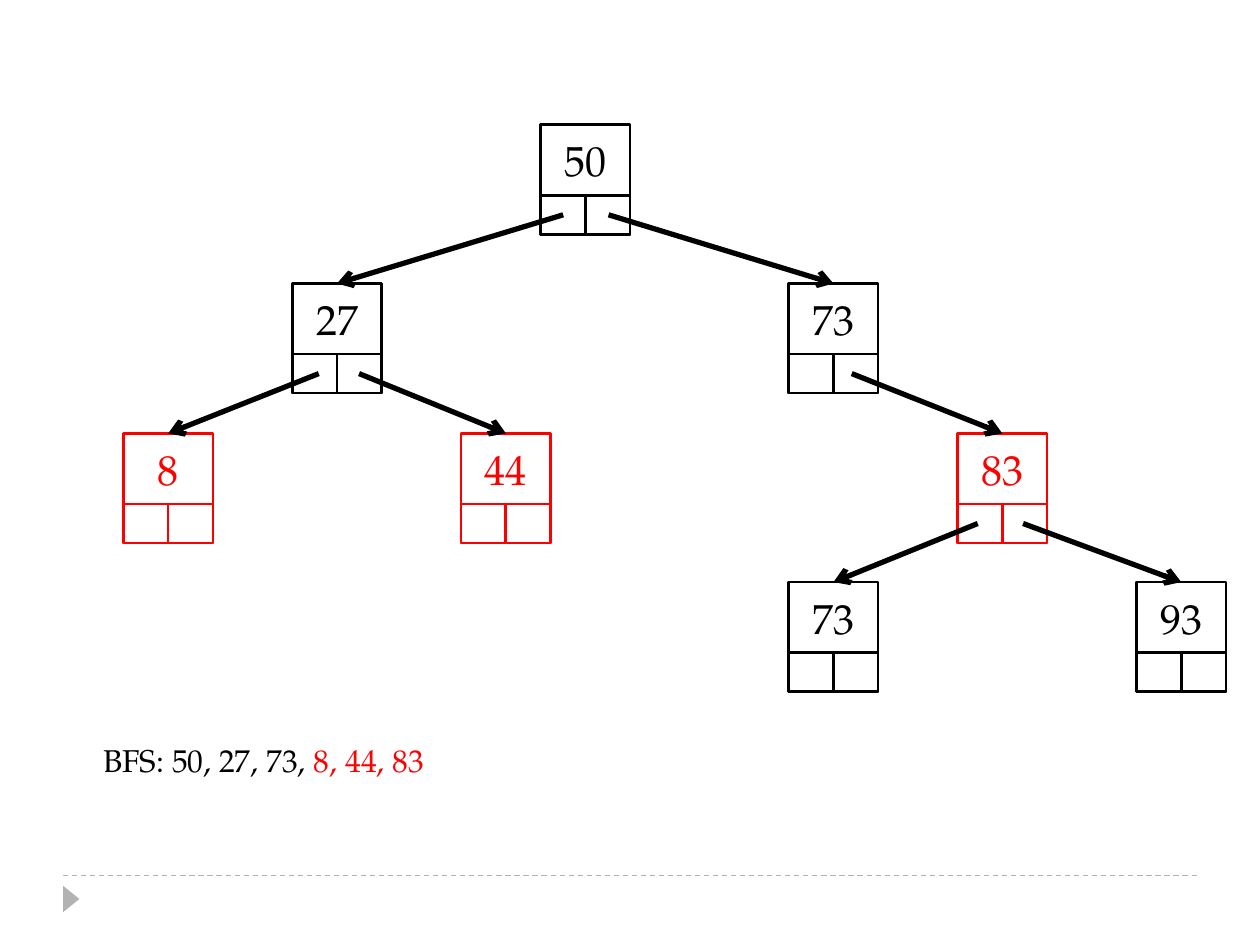
from lxml.etree import SubElement
from pptx import Presentation
from pptx.dml.color import RGBColor
from pptx.enum.dml import MSO_LINE
from pptx.enum.shapes import MSO_CONNECTOR, MSO_SHAPE
from pptx.enum.text import MSO_ANCHOR, MSO_AUTO_SIZE, PP_ALIGN
from pptx.oxml.ns import qn
from pptx.util import Inches, Pt

COLORS = {"black": "000000", "red": "FF0000", "gray": "B2B2B2"}
FONT = "TeX Gyre Pagella"

NODES = {
    "root": ("50", 4.29, 0.99, "black"),
    "left": ("27", 2.32, 2.25, "black"),
    "right": ("73", 6.26, 2.25, "black"),
    "left-left": ("8", 0.98, 3.44, "red"),
    "left-right": ("44", 3.66, 3.44, "red"),
    "right-right": ("83", 7.6, 3.44, "red"),
    "leaf-left": ("73", 6.26, 4.62, "black"),
    "leaf-right": ("93", 9.02, 4.62, "black"),
}
EDGES = [
    ("root", "left", 0.18),
    ("root", "right", 0.54),
    ("left", "left-left", 0.21),
    ("left", "left-right", 0.53),
    ("right", "right-right", 0.5),
    ("right-right", "leaf-left", 0.16),
    ("right-right", "leaf-right", 0.52),
]
CAPTION = [("BFS: 50, 27, 73, ", "black"), ("8, 44, 83", "red")]

NODE_WIDTH, NODE_HEIGHT = 0.71, 0.87
POINTER_WIDTH, POINTER_HEIGHT = NODE_WIDTH / 2, 0.31
POINTER_TOP = NODE_HEIGHT - POINTER_HEIGHT


def color(name):
    return RGBColor.from_string(COLORS[name])


def add_run(paragraph, text, size, color_name):
    run = paragraph.add_run()
    run.text = text
    run.font.name = FONT
    run.font.size = Pt(size)
    run.font.color.rgb = color(color_name)


def add_box(slide, left, top, width, height, color_name):
    shape = slide.shapes.add_shape(
        MSO_SHAPE.RECTANGLE, *map(Inches, (left, top, width, height)))
    shape.shadow.inherit = False
    shape.fill.background()
    shape.line.color.rgb = color(color_name)
    shape.line.width = Pt(1.5)
    return shape


def add_node(slide, label, left, top, color_name):
    frame = add_box(slide, left, top, NODE_WIDTH, NODE_HEIGHT, color_name).text_frame
    frame.vertical_anchor = MSO_ANCHOR.MIDDLE
    frame.margin_top = 0
    frame.margin_bottom = Inches(POINTER_HEIGHT)
    paragraph = frame.paragraphs[0]
    paragraph.alignment = PP_ALIGN.CENTER
    add_run(paragraph, label, 24, color_name)
    for column in range(2):
        add_box(slide, left + column * POINTER_WIDTH, top + POINTER_TOP,
                POINTER_WIDTH, POINTER_HEIGHT, color_name)


def add_line(slide, start, end, color_name, width):
    connector = slide.shapes.add_connector(
        MSO_CONNECTOR.STRAIGHT, *map(Inches, (*start, *end)))
    connector.line.color.rgb = color(color_name)
    connector.line.width = Pt(width)
    SubElement(connector._element.spPr, qn("a:effectLst"))
    return connector


def add_edge(slide, parent, child, offset):
    _, parent_left, parent_top, _ = NODES[parent]
    _, child_left, child_top, _ = NODES[child]
    start = (parent_left + offset, parent_top + POINTER_TOP + POINTER_HEIGHT / 2)
    end = (child_left + NODE_WIDTH / 2, child_top)
    connector = add_line(slide, start, end, "black", 3)
    SubElement(connector.line._get_or_add_ln(), qn("a:tailEnd"), type="arrow")


def add_footer(slide):
    rule = add_line(slide, (0.5, 6.95), (9.5, 6.95), "gray", 0.75)
    rule.line.dash_style = MSO_LINE.DASH
    marker = slide.shapes.add_shape(
        MSO_SHAPE.ISOSCELES_TRIANGLE, *map(Inches, (0.46, 7.07, 0.21, 0.13)))
    marker.rotation = 90
    marker.shadow.inherit = False
    marker.fill.solid()
    marker.fill.fore_color.rgb = color("gray")
    marker.line.fill.background()


def add_caption(slide):
    box = slide.shapes.add_textbox(*map(Inches, (0.72, 5.83, 2.77, 0.4)))
    frame = box.text_frame
    frame.word_wrap = False
    frame.auto_size = MSO_AUTO_SIZE.SHAPE_TO_FIT_TEXT
    for text, color_name in CAPTION:
        add_run(frame.paragraphs[0], text, 18, color_name)


def main():
    presentation = Presentation()
    presentation.slide_width = Inches(10)
    presentation.slide_height = Inches(7.5)
    slide = presentation.slides.add_slide(presentation.slide_layouts[6])
    add_footer(slide)
    for node in NODES.values():
        add_node(slide, *node)
    for edge in EDGES:
        add_edge(slide, *edge)
    add_caption(slide)
    presentation.save("out.pptx")


if __name__ == "__main__":
    main()
